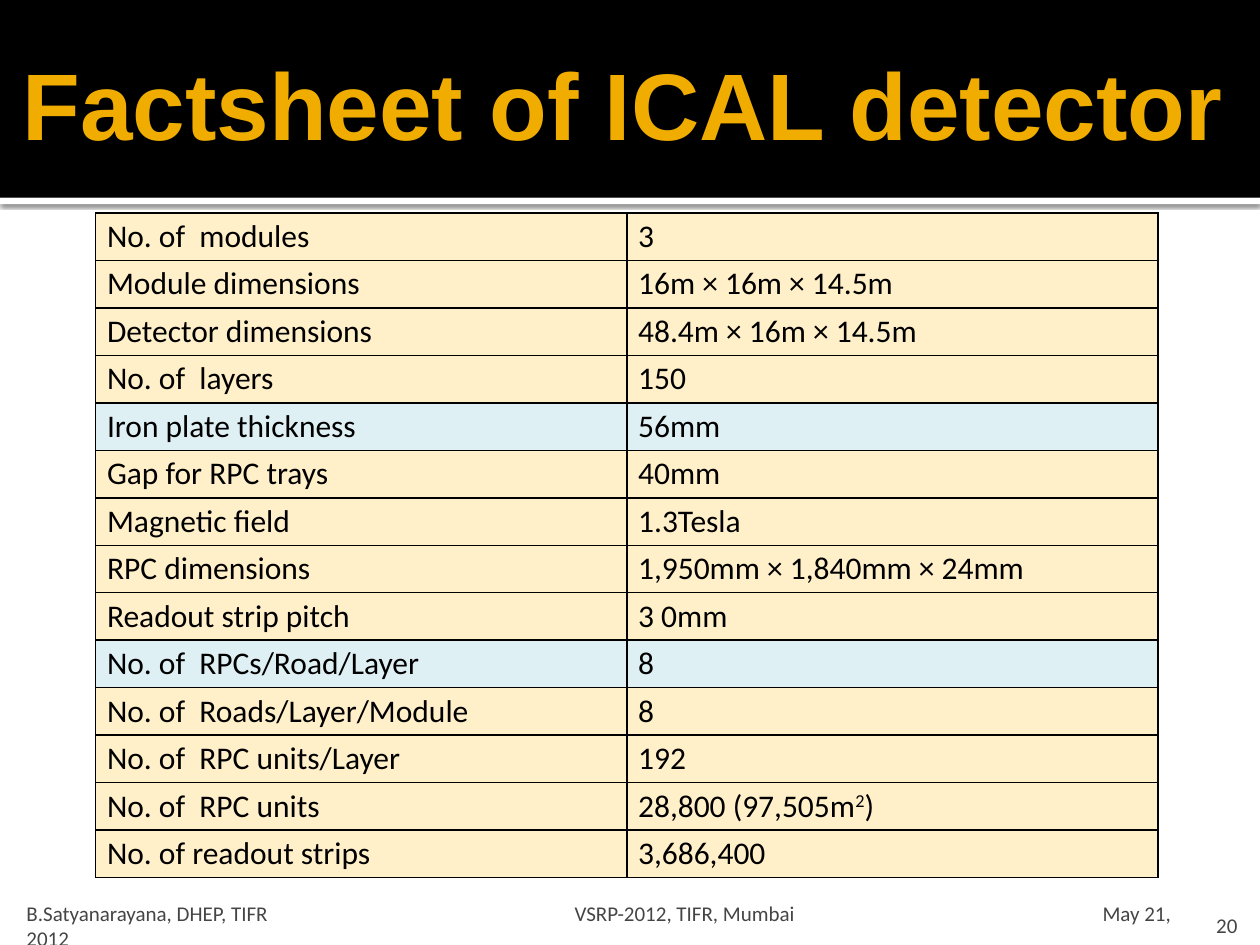
from lxml import etree
from pptx import Presentation
from pptx.dml.color import RGBColor
from pptx.enum.shapes import MSO_SHAPE as Shape
from pptx.enum.text import MSO_ANCHOR as Anchor, PP_ALIGN as Align
from pptx.oxml.ns import qn
from pptx.util import Inches, Pt

CREAM, PALE_BLUE = "FFF0C9", "DFF0F5"
BLACK, WHITE, GOLD, GREY = "000000", "FFFFFF", "F0AD00", "454545"
FACTS = [
    ("No. of  modules", "3"),
    ("Module dimensions", "16m × 16m × 14.5m"),
    ("Detector dimensions", "48.4m × 16m × 14.5m"),
    ("No. of  layers", "150"),
    ("Iron plate thickness", "56mm"),
    ("Gap for RPC trays", "40mm"),
    ("Magnetic field", "1.3Tesla"),
    ("RPC dimensions", "1,950mm × 1,840mm × 24mm"),
    ("Readout strip pitch", "3 0mm"),
    ("No. of  RPCs/Road/Layer", "8"),
    ("No. of  Roads/Layer/Module", "8"),
    ("No. of  RPC units/Layer", "192"),
    ("No. of  RPC units", "28,800 (97,505m^2^)"),  # ^ marks a superscript
    ("No. of readout strips", "3,686,400"),
]
BLUE_ROWS = {4, 9}


def color(value):
    return RGBColor.from_string(value)


def add_node(parent, tag, **attributes):
    return etree.SubElement(parent, qn(tag), attributes)


def style(font, size, hue, name="Calibri", bold=False):
    font.size, font.name, font.bold = Pt(size), name, bold
    font.color.rgb = color(hue)


def add_bar(page, box, fill):
    bar = page.shapes.add_shape(Shape.RECTANGLE, *map(Inches, box))
    bar.shadow.inherit = False
    bar.fill.solid()
    bar.fill.fore_color.rgb = color(fill)
    bar.line.fill.background()
    return bar


def add_text(page, box, insets):
    """Add an empty, wrapping text box and return its frame."""
    frame = page.shapes.add_textbox(*map(Inches, box)).text_frame
    frame.word_wrap = True
    frame.vertical_anchor = Anchor.MIDDLE
    (frame.margin_left, frame.margin_top,
     frame.margin_right, frame.margin_bottom) = map(Inches, insets)
    return frame


def add_header(page, box):
    left, top, width, height = box
    # White rule with a soft shadow below the black band
    rule = add_bar(page, (left, top + height, width, 0.05), WHITE)
    effects = rule._element.spPr.find(qn("a:effectLst"))
    shadow = add_node(effects, "a:outerShdw", blurRad=str(Pt(2.5)), dist=str(Pt(0.8)),
                      dir="5400000", algn="t", rotWithShape="0")
    add_node(add_node(shadow, "a:srgbClr", val=BLACK), "a:alpha", val="60000")
    add_bar(page, box, BLACK)
    # Title
    frame = add_text(page, (left + 0.08, top + 0.13, width - 0.16, height - 0.2),
                     (0.1, 0.05, 0.05, 0.05))
    frame.text = "Factsheet of ICAL detector"
    style(frame.paragraphs[0].runs[0].font, 54, GOLD, "Arial", True)


def add_borders(cell):
    properties = cell._tc.get_or_add_tcPr()
    for index, side in enumerate(("a:lnL", "a:lnR", "a:lnT", "a:lnB")):
        line = etree.Element(qn(side), w=str(Pt(1)))
        add_node(add_node(line, "a:solidFill"), "a:srgbClr", val=BLACK)
        properties.insert(index, line)


def fill_cell(cell, text, fill):
    cell.fill.solid()
    cell.fill.fore_color.rgb = color(fill)
    cell.vertical_anchor = Anchor.MIDDLE
    cell.margin_left = cell.margin_right = Inches(0.09)
    cell.margin_top = cell.margin_bottom = Inches(0.03)
    para = cell.text_frame.paragraphs[0]
    for index, part in enumerate(text.split("^")):
        span = para.add_run()
        span.text = part
        style(span.font, 18, BLACK)
        if index % 2:
            span.font._element.set("baseline", "30000")
    add_borders(cell)


def add_facts(page, box):
    left, top, width, height = map(Inches, box)
    table = page.shapes.add_table(len(FACTS), 2, left, top, width, height).table
    table.first_row = table.horz_banding = False
    for column in table.columns:
        column.width = width // 2
    for index, fact in enumerate(FACTS):
        table.rows[index].height = height // len(FACTS)
        fill = PALE_BLUE if index in BLUE_ROWS else CREAM
        for cell, text in zip(table.rows[index].cells, fact):
            fill_cell(cell, text, fill)


def add_footer(page, box):
    left, top, width, height = box
    number_width = 0.43
    # Author, event and date, set apart by tab stops
    frame = add_text(page, (left, top, width - number_width, height),
                     (0.17, 0.05, 0.05, 0))
    para = frame.paragraphs[0]
    para.text = "B.Satyanarayana, DHEP, TIFR\tVSRP-2012, TIFR, Mumbai\tMay 21, 2012"
    tabs = add_node(para._p.get_or_add_pPr(), "a:tabLst")
    for stop in (4.35, 8.54):
        add_node(tabs, "a:tab", pos=str(Inches(stop)), algn="l")
    style(para.runs[0].font, 12, GREY)
    # Page number
    frame = add_text(page, (left + width - number_width, top, number_width, height),
                     (0.1, 0.05, 0.1, 0))
    frame.text = "20"
    frame.paragraphs[0].alignment = Align.RIGHT
    style(frame.paragraphs[0].runs[0].font, 12, GREY)


def main():
    deck = Presentation()
    deck.slide_width, deck.slide_height = Inches(10), Inches(7.5)
    page = deck.slides.add_slide(deck.slide_layouts[6])
    add_header(page, (0, 0, 10, 1.57))
    add_footer(page, (0.04, 7.18, 9.88, 0.28))
    add_facts(page, (0.76, 1.69, 8.43, 5.28))
    deck.save("out.pptx")


if __name__ == "__main__":
    main()
